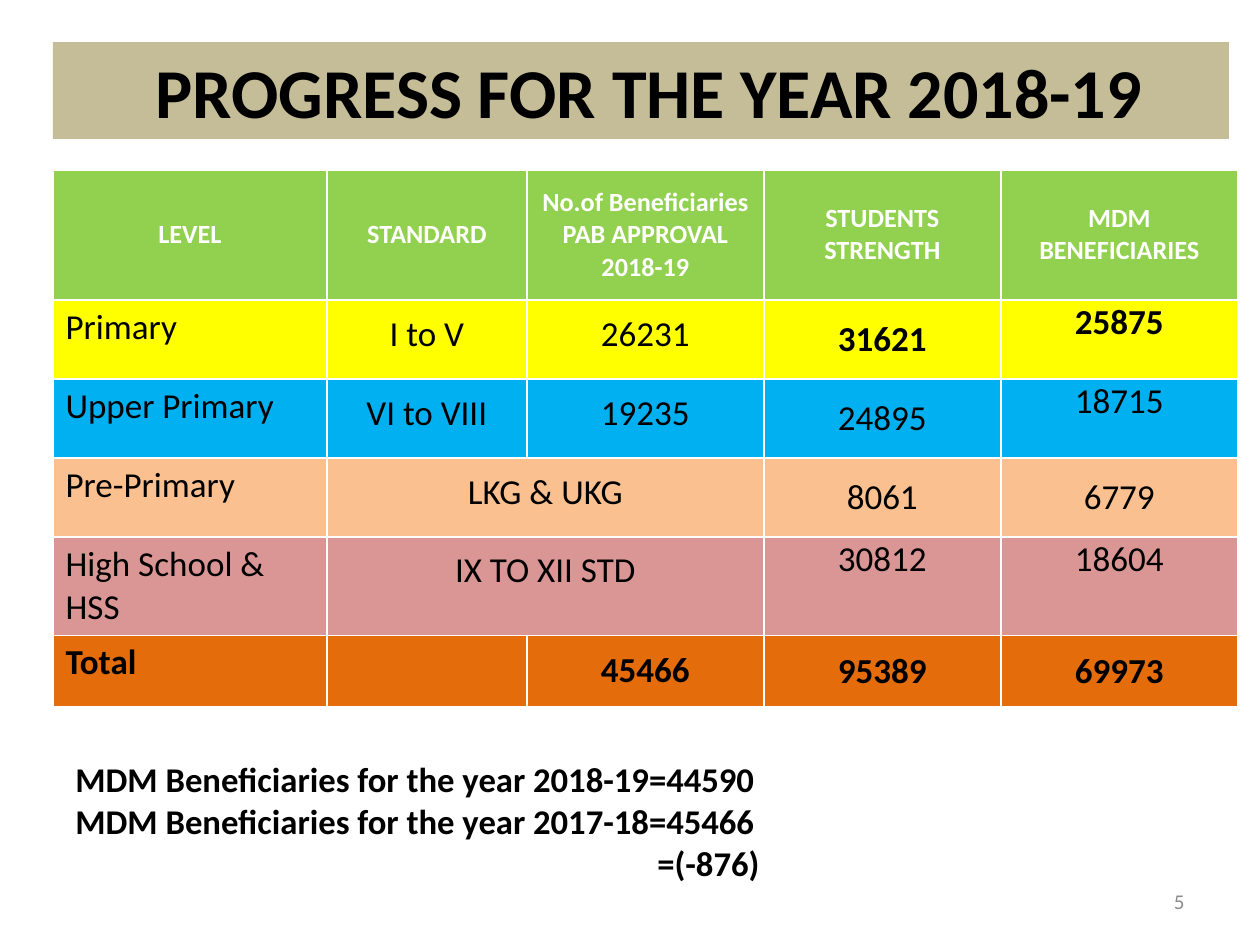
from dataclasses import dataclass

from pptx import Presentation
from pptx.dml.color import RGBColor
from pptx.enum.shapes import MSO_SHAPE
from pptx.enum.text import MSO_ANCHOR, PP_ALIGN
from pptx.util import Emu, Pt

RECT = MSO_SHAPE.RECTANGLE
TOP, MID = MSO_ANCHOR.TOP, MSO_ANCHOR.MIDDLE
LEFT, MIDST, RIGHT = PP_ALIGN.LEFT, PP_ALIGN.CENTER, PP_ALIGN.RIGHT


@dataclass(frozen=True)
class Theme:
    font: str = "Calibri"
    ink: str = "000000"
    white: str = "FFFFFF"
    gray: str = "8C8C8C"
    tan: str = "C4BD97"
    green: str = "92D050"
    rows: tuple = ("FFFF00", "00B0F0", "FAC090", "D99694", "E46C0A")
    title: float = 40
    head: float = 15
    body: float = 20
    note: float = 19.8
    page: float = 12


def px(n):
    return Emu(round(n * 914400 / 126))


def paint(fill, color):
    fill.solid()
    fill.fore_color.rgb = RGBColor.from_string(color)


def write(frame, text, *, font, size, color, bold=False, align=LEFT,
          space=None, after=None):
    """Fill a text frame, one paragraph per line of text."""
    for i, line in enumerate(text.split("\n")):
        para = frame.add_paragraph() if i else frame.paragraphs[0]
        para.alignment = align
        if space:
            para.line_spacing = space
        if after is not None:
            para.space_after = Pt(after)
        run = para.add_run()
        run.text = line
        run.font.name = font
        run.font.size = Pt(size)
        run.font.bold = bold
        run.font.color.rgb = RGBColor.from_string(color)


class Page:
    def __init__(self, deck, theme):
        self.theme = theme
        self.slide = deck.slides.add_slide(deck.slide_layouts[6])

    def banner(self, box, text):
        shape = self.slide.shapes.add_shape(RECT, *map(px, box))
        shape.shadow.inherit = False
        paint(shape.fill, self.theme.tan)
        shape.line.fill.background()
        frame = shape.text_frame
        frame.vertical_anchor = MID
        frame.word_wrap = True
        write(frame, text, font=self.theme.font, size=self.theme.title,
              color=self.theme.ink, bold=True, align=MIDST)

    def label(self, box, text, **form):
        frame = self.slide.shapes.add_textbox(*map(px, box)).text_frame
        frame.word_wrap = True
        frame.vertical_anchor = MID
        write(frame, text, font=self.theme.font, **form)
        return frame

    def grid(self, at, wide, high):
        box = (*at, sum(wide), sum(high))
        table = self.slide.shapes.add_table(
            len(high), len(wide), *map(px, box)).table
        table.horz_banding = False
        for col, n in zip(table.columns, wide):
            col.width = px(n)
        for row, n in zip(table.rows, high):
            row.height = px(n)
        return table

    def cell(self, cell, text, fill, anchor=TOP, tight=False, **form):
        paint(cell.fill, fill)
        cell.vertical_anchor = anchor
        if tight:
            cell.margin_left = cell.margin_right = cell.margin_top = px(1)
            cell.margin_bottom = 0
        if text:
            write(cell.text_frame, text, font=self.theme.font, **form)


HEADS = ("LEVEL", "STANDARD", "No.of Beneficiaries\nPAB APPROVAL 2018-19",
         "STUDENTS STRENGTH", "MDM BENEFICIARIES")
# None marks a cell merged into the one on its left
ROWS = (
    ("Primary", "I to V", "26231", "31621", "25875"),
    ("Upper Primary", "VI to VIII", "19235", "24895", "18715"),
    ("Pre-Primary", "LKG & UKG", None, "8061", "6779"),
    ("High School & HSS", "IX TO XII STD", None, "30812", "18604"),
    ("Total", "", "45466", "95389", "69973"),
)
BOLD = {(1, 3), (1, 4)} | {(5, c) for c in range(5)}
HIGH = {(1, 4), (2, 4), (4, 3), (4, 4)}  # figures set at the cell top


def main():
    theme = Theme()
    deck = Presentation()
    deck.slide_width, deck.slide_height = px(1260), px(945)
    page = Page(deck, theme)

    # Title
    page.banner((53, 42, 1176, 97), " PROGRESS FOR THE YEAR 2018-19")

    # Table
    table = page.grid((53, 170), (274, 200, 237, 237, 237),
                      (130, 79, 79, 79, 95, 71))
    for c, text in enumerate(HEADS):
        page.cell(table.cell(0, c), text, theme.green, MID, size=theme.head,
                  color=theme.white, bold=True, align=MIDST)
    for r, (row, fill) in enumerate(zip(ROWS, theme.rows), 1):
        for c, text in enumerate(row):
            cell = table.cell(r, c)
            if text is None:
                table.cell(r, c - 1).merge(cell)
                continue
            form = dict(size=theme.body, color=theme.ink,
                        bold=(r, c) in BOLD, align=MIDST if c else LEFT)
            if c in (1, 2) and r < len(ROWS):
                form.update(space=1.15, after=10)
            mid = (c > 2 or (r, c) == (5, 2)) and (r, c) not in HIGH
            page.cell(cell, text, fill, MID if mid else TOP, c > 2, **form)

    # Comparison of the two years
    note = page.label(
        (63, 735, 1134, 189),
        "MDM Beneficiaries for the year 2018-19=44590\n"
        "MDM Beneficiaries for the year 2017-18=45466\n=(-876)",
        size=theme.note, color=theme.ink, bold=True)
    note.margin_bottom = px(24)
    # The difference lines up under the figures
    last = note.paragraphs[-1]._p.get_or_add_pPr()
    last.set("marL", str(px(582)))

    # Page number
    page.label((903, 876, 294, 50), "5", size=theme.page, color=theme.gray,
               align=RIGHT)

    deck.save("out.pptx")


if __name__ == "__main__":
    main()
